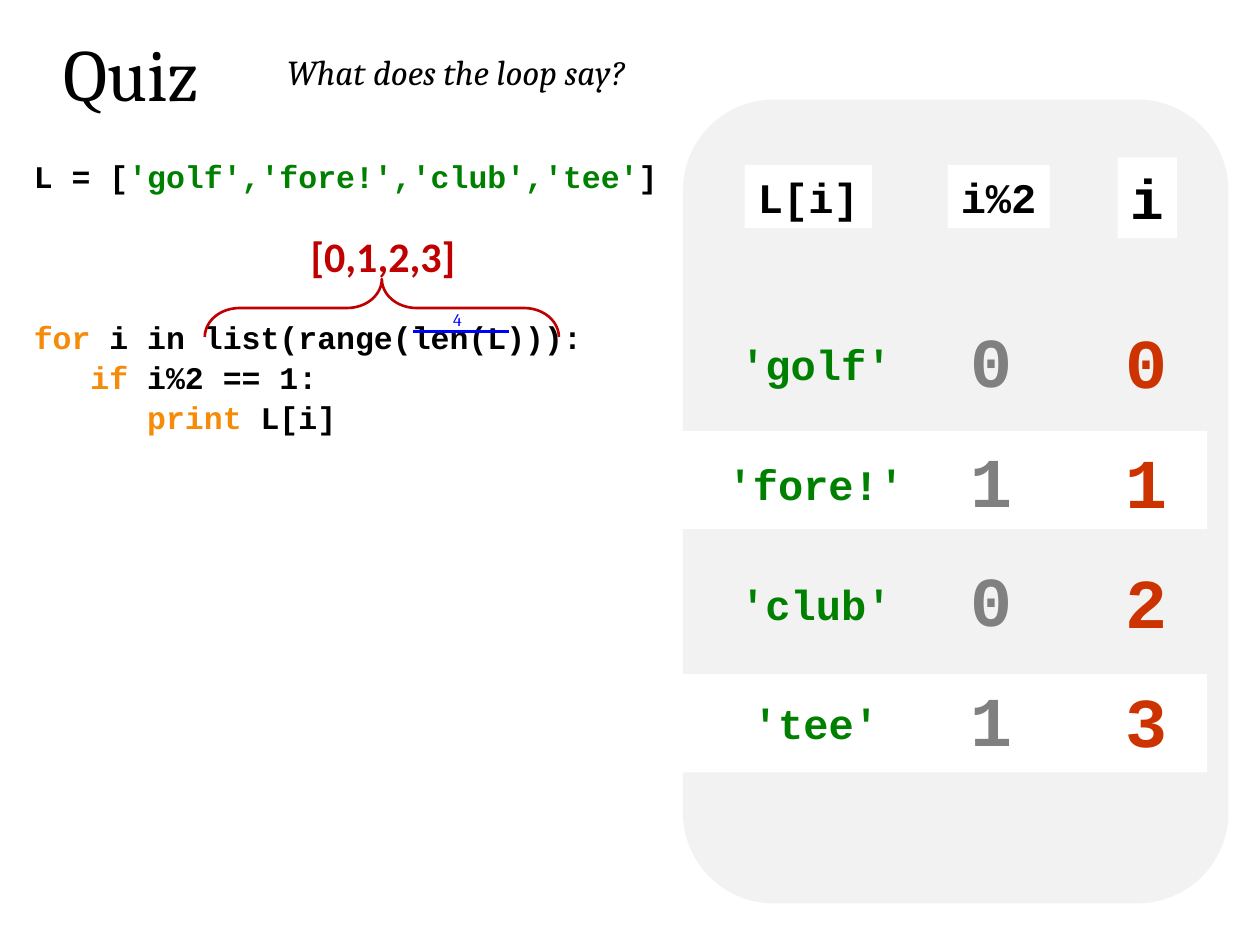
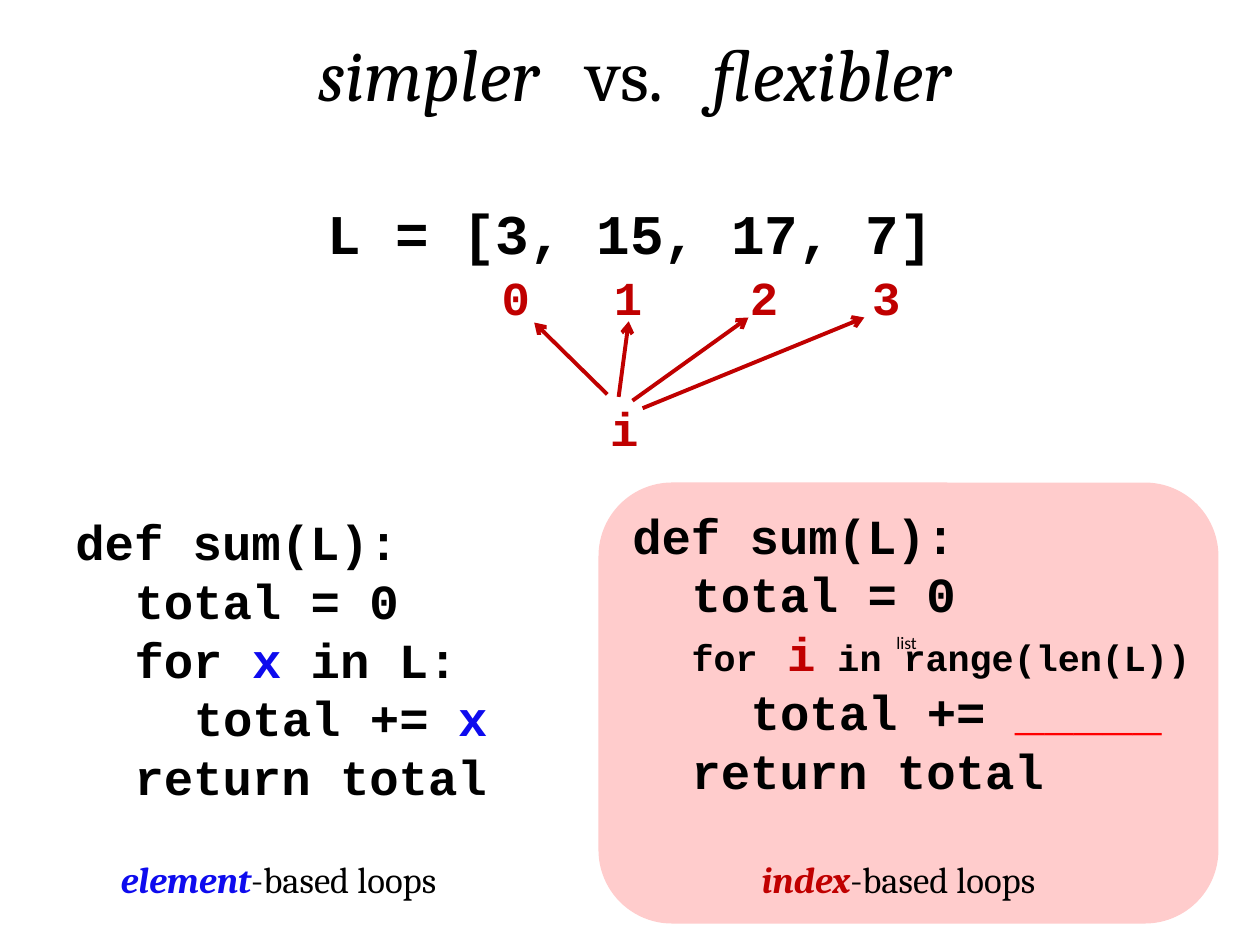
from dataclasses import dataclass
from lxml.etree import SubElement
from pptx import Presentation
from pptx.dml.color import RGBColor
from pptx.enum.shapes import MSO_CONNECTOR, MSO_SHAPE
from pptx.enum.text import MSO_AUTO_SIZE, PP_ALIGN
from pptx.oxml.ns import qn
from pptx.util import Emu, Pt

PX = 9144


@dataclass(frozen=True)
class Theme:
    serif: str = "Cambria"
    sans: str = "Calibri"
    mono: str = "Courier New"
    black: str = "000000"
    white: str = "FFFFFF"
    panel: str = "F2F2F2"
    pink: str = "FFCCCC"
    green: str = "008000"
    gray: str = "808080"
    index: str = "CC3300"
    crimson: str = "C00000"
    red: str = "FF0000"
    blue: str = "0000FF"
    element: str = "0E0BEE"
    keyword: str = "F68B09"
    title_size: int = 42
    cell_size: int = 40
    big_size: int = 32
    code_size: int = 28
    pointer_size: int = 27
    label_size: int = 24
    caption_size: int = 21
    subtitle_size: int = 20
    listing_size: int = 18
    note_size: int = 10


@dataclass(frozen=True)
class Piece:
    text: str
    color: str = Theme.black
    size: int = 0
    bold: bool = False
    italic: bool = False
    spacing: int = 0


@dataclass(frozen=True)
class Line:
    pieces: tuple
    indent: int = 0
    height: int = 0
    before: int = 0


class Deck:
    def __init__(self, theme):
        self.theme = theme
        self.presentation = Presentation()
        self.presentation.slide_width = Emu(1000 * PX)
        self.presentation.slide_height = Emu(750 * PX)
        self.slide = None

    def new_slide(self):
        self.slide = self.presentation.slides.add_slide(self.presentation.slide_layouts[6])

    def shape(self, kind, left, top, width, height, fill=None, line=None, adjustments=(), rotation=0):
        shape = self.slide.shapes.add_shape(kind, *(Emu(n * PX) for n in (left, top, width, height)))
        shape.shadow.inherit = False
        shape.rotation = rotation
        for position, value in enumerate(adjustments):
            shape.adjustments[position] = value
        if fill:
            shape.fill.solid()
            shape.fill.fore_color.rgb = RGBColor.from_string(fill)
        else:
            shape.fill.background()
        if line:
            shape.line.color.rgb = RGBColor.from_string(line)
            shape.line.width = Pt(1.5)
        else:
            shape.line.fill.background()

    def text(self, left, top, width, height, lines, font, size, align=PP_ALIGN.CENTER, wrap=True, fill=None):
        box = self.slide.shapes.add_textbox(*(Emu(n * PX) for n in (left, top, width, height)))
        if fill:
            box.fill.solid()
            box.fill.fore_color.rgb = RGBColor.from_string(fill)
        frame = box.text_frame
        frame.word_wrap = wrap
        frame.auto_size = MSO_AUTO_SIZE.SHAPE_TO_FIT_TEXT
        for number, line in enumerate(lines):
            paragraph = frame.add_paragraph() if number else frame.paragraphs[0]
            paragraph.alignment = align
            if line.indent:
                paragraph._p.get_or_add_pPr().set("marL", str(line.indent * PX))
            if line.height:
                paragraph.line_spacing = Pt(line.height)
            if line.before:
                paragraph.space_before = Pt(line.before)
            for piece in line.pieces:
                run = paragraph.add_run()
                run.text = piece.text
                run.font.name = font
                run.font.size = Pt(piece.size or size)
                run.font.bold = piece.bold or font == self.theme.mono
                run.font.italic = piece.italic
                run.font.color.rgb = RGBColor.from_string(piece.color)
                if piece.spacing:
                    run.font._element.set("spc", str(piece.spacing * 100))

    def label(self, center, top, width, height, piece, font, size, fill=None):
        self.text(center - width // 2, top, width, height, [Line((piece,))], font, size, wrap=False, fill=fill)

    def title(self, left, width, *pieces):
        self.text(left, 17, width, 81, [Line(pieces)], self.theme.serif, self.theme.title_size)

    def caption(self, left, word, color):
        pieces = (Piece(word, color, bold=True, italic=True), Piece("-based loops"))
        self.text(left, 675, 342, 45, [Line(pieces)], self.theme.serif, self.theme.caption_size)

    def code(self, left, top, width, height, lines, size):
        self.text(left, top, width, height, lines, self.theme.mono, size, PP_ALIGN.LEFT)

    def line(self, start, end, color, width, arrow=False):
        connector = self.slide.shapes.add_connector(
            MSO_CONNECTOR.STRAIGHT, *(Emu(n * PX) for n in (*start, *end)))
        connector.line.color.rgb = RGBColor.from_string(color)
        connector.line.width = Pt(width)
        if arrow:
            SubElement(connector.line._get_or_add_ln(), qn("a:tailEnd")).set("type", "arrow")
        SubElement(connector._element.spPr, qn("a:effectLst"))


def quiz_slide(deck):
    theme = deck.theme
    deck.new_slide()
    deck.shape(MSO_SHAPE.ROUNDED_RECTANGLE, 542, 79, 433, 638, theme.panel)
    for band_top in (342, 535):
        deck.shape(MSO_SHAPE.RECTANGLE, 500, band_top, 458, 78, theme.white)
    deck.title(25, 158, Piece("Quiz"))
    deck.label(362, 35, 308, 44, Piece("What does the loop say?", italic=True), theme.serif, theme.subtitle_size)

    deck.code(17, 130, 554, 238, [
        Line((Piece("L = ["), Piece("'golf','fore!','club','tee'", theme.green), Piece("]")), height=14),
        Line((Piece("for ", theme.keyword), Piece("i in list(range(len(L))):")), height=14, before=78),
        Line((Piece("if", theme.keyword), Piece(" i%2 == 1:")), indent=45, height=14, before=9),
        Line((Piece("print ", theme.keyword), Piece("L[i]")), indent=90, height=14, before=9),
    ], theme.listing_size)

    word_center, remainder_center, index_center = 647, 787, 910
    deck.label(index_center, 125, 47, 64, Piece("i"), theme.mono, theme.big_size, theme.white)
    deck.label(remainder_center + 5, 131, 81, 50, Piece("i%2"), theme.mono, theme.label_size, theme.white)
    deck.label(word_center - 6, 131, 101, 50, Piece("L[i]"), theme.mono, theme.label_size, theme.white)
    for index, word in enumerate(("'golf'", "'fore!'", "'club'", "'tee'")):
        top = 247 + 95 * index
        deck.label(index_center, top + 1, 54, 77, Piece(str(index), theme.index), theme.mono, theme.cell_size)
        deck.label(remainder_center, top, 54, 77, Piece(str(index % 2), theme.gray), theme.mono, theme.cell_size)
        deck.label(word_center, top + 17, 20 * len(word) + 21, 50, Piece(word, theme.green),
                   theme.mono, theme.label_size)

    deck.label(363, 240, 28, 27, Piece("4", theme.blue), theme.serif, theme.note_size)
    deck.line((328, 263), (404, 263), theme.blue, 1.5)
    deck.label(304, 178, 136, 50, Piece("[0,1,2,3]", theme.crimson, bold=True), theme.sans, theme.label_size)
    deck.shape(MSO_SHAPE.LEFT_BRACE, 280, 104, 46, 281, line=theme.crimson, adjustments=(0.6, 0.5), rotation=90)


def loops_slide(deck):
    theme = deck.theme
    step = 47
    opening = (Line((Piece("def sum(L):"),)), Line((Piece("total = 0"),), step))
    closing = Line((Piece("return total"),), step)
    deck.new_slide()
    deck.code(50, 401, 417, 246, [
        *opening,
        Line((Piece("for "), Piece("x", theme.element), Piece(" in L:")), step),
        Line((Piece("total += "), Piece("x", theme.element)), 2 * step),
        closing,
    ], theme.code_size)
    deck.caption(50, "element", theme.element)
    deck.label(500, 153, 717, 64, Piece("L = [3, 15, 17, 7]"), theme.mono, theme.big_size)

    deck.label(495, 312, 43, 56, Piece("i", theme.crimson), theme.mono, theme.pointer_size)
    pointers = (
        (409, (482, 313), (424, 256)),
        (498, (491, 315), (499, 255)),
        (606, (502, 318), (594, 252)),
        (703, (510, 324), (686, 252)),
    )
    for index, (center, start, end) in enumerate(pointers):
        deck.label(center, 208, 43, 56, Piece(str(index), theme.crimson), theme.mono, theme.pointer_size)
        deck.line(start, end, theme.crimson, 2.25, arrow=True)

    gap = Piece(" ", spacing=18)
    deck.title(158, 692, Piece("simpler", italic=True), gap, Piece("vs."), gap, Piece("flexibler", italic=True))

    deck.shape(MSO_SHAPE.ROUNDED_RECTANGLE, 475, 383, 492, 350, theme.pink)
    small = theme.caption_size
    deck.code(492, 396, 483, 246, [
        *opening,
        Line((Piece("for", size=small), Piece(" "), Piece("i", theme.crimson, theme.pointer_size),
              Piece(" in range(len(L))", size=small)), step),
        Line((Piece("total +="), Piece(" _____", theme.red)), 2 * step),
        closing,
    ], theme.code_size)
    deck.caption(542, "index", theme.crimson)
    deck.label(719, 497, 37, 27, Piece("list", theme.sans and theme.black), theme.sans, theme.note_size)


def main():
    deck = Deck(Theme())
    quiz_slide(deck)
    loops_slide(deck)
    deck.presentation.save("out.pptx")


if __name__ == "__main__":
    main()
